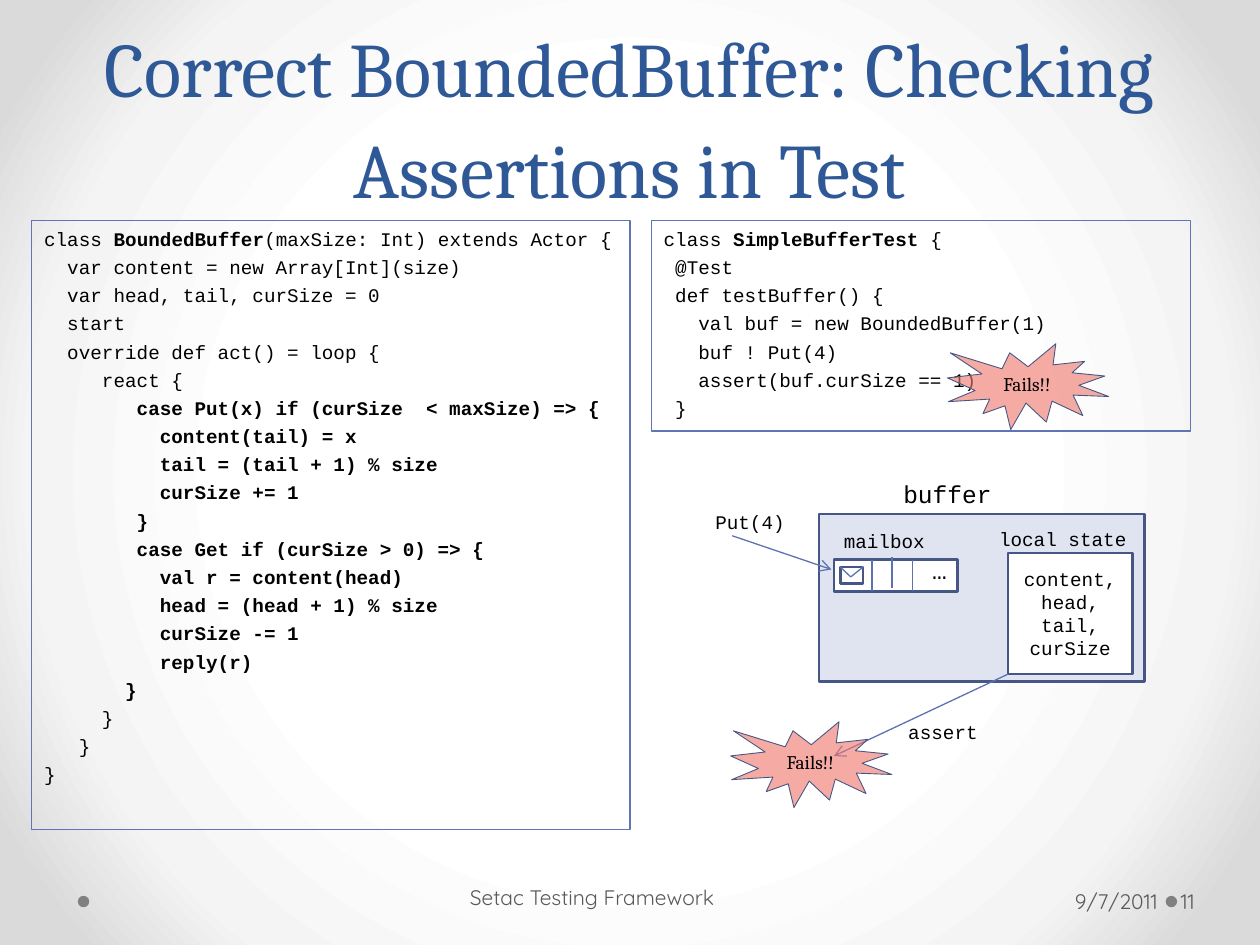
"""Build the slide on checking assertions of a correct BoundedBuffer."""
from lxml import etree
from pptx import Presentation
from pptx.dml.color import RGBColor
from pptx.enum.shapes import MSO_CONNECTOR, MSO_SHAPE
from pptx.enum.text import MSO_ANCHOR, MSO_AUTO_SIZE, PP_ALIGN
from pptx.oxml import parse_xml
from pptx.oxml.ns import nsdecls, qn
from pptx.util import Cm, Pt

RECT, OVAL, SEAL = MSO_SHAPE.RECTANGLE, MSO_SHAPE.OVAL, MSO_SHAPE.EXPLOSION1
STRAIGHT = MSO_CONNECTOR.STRAIGHT
LEFT, CENTER, RIGHT = PP_ALIGN.LEFT, PP_ALIGN.CENTER, PP_ALIGN.RIGHT
TOP, MIDDLE, BOTTOM = MSO_ANCHOR.TOP, MSO_ANCHOR.MIDDLE, MSO_ANCHOR.BOTTOM
NO_FIT = MSO_AUTO_SIZE.NONE

COLORS = {
    "title": "2F5897", "text": "000000", "footer": "595959", "dot": "808080",
    "frame": "6076B4", "outline": "475785", "line": "5C72B2",
    "actor": "DFE4F0", "white": "FFFFFF", "fail": "EF796D",
}
BACKDROP = [(50, "FFFFFF"), (76, "F4F4F4"), (92, "DADADA")]
SERIF, MONO, SANS = "Cambria", "Courier New", "Quicksand"
INSETS = (0.25, 0.13, 0.25, 0.13)

BUFFER_CODE = """class **BoundedBuffer**(maxSize: Int) extends Actor {
  var content = new Array[Int](size)
  var head, tail, curSize = 0
  start
  override def act() = loop {
     react {
**        case Put(x) if (curSize  < maxSize) => {
          content(tail) = x
          tail = (tail + 1) % size
          curSize += 1
        }
        case Get if (curSize > 0) => {
          val r = content(head)
          head = (head + 1) % size
          curSize -= 1
          reply(r)
       }**
     }
   }
}"""
TEST_CODE = """class **SimpleBufferTest** {
 @Test
 def testBuffer() {
   val buf = new BoundedBuffer(1)
   buf ! Put(4)
   assert(buf.curSize == 1)
 }"""


def write(frame, text, font=MONO, size=11, color="text", align=LEFT, anchor=TOP,
          insets=INSETS, before=0, leading=None):
    """Fill a text frame, one paragraph a line, with ** switching bold on and off."""
    frame.word_wrap = True
    frame.auto_size = NO_FIT
    frame.vertical_anchor = anchor
    (frame.margin_left, frame.margin_top,
     frame.margin_right, frame.margin_bottom) = map(Cm, insets)
    bold = False
    for row, line in enumerate(text.split("\n")):
        paragraph = frame.add_paragraph() if row else frame.paragraphs[0]
        paragraph.alignment = align
        paragraph.space_before = Pt(before if row else 0)
        if leading:
            paragraph.line_spacing = Pt(leading)
        for index, part in enumerate(line.split("**")):
            if index:
                bold = not bold
            if part:
                run = paragraph.add_run()
                run.text = part
                run.font.name, run.font.size, run.font.bold = font, Pt(size), bold
                run.font.color.rgb = RGBColor.from_string(COLORS[color])


class SlideBuilder:
    """Hold the current slide and draw its elements in one style."""

    def __init__(self, slide):
        self.slide = slide
        self.shapes = slide.shapes

    def background(self, stops):
        """Lay a radial gradient behind the slide."""
        marks = "".join(f'<a:gs pos="{pos * 1000}"><a:srgbClr val="{color}"/></a:gs>'
                        for pos, color in stops)
        self.slide.element.cSld.insert(0, parse_xml(
            f'<p:bg {nsdecls("p", "a")}><p:bgPr><a:gradFill rotWithShape="1">'
            f'<a:gsLst>{marks}</a:gsLst><a:path path="circle">'
            '<a:fillToRect l="50000" t="50000" r="50000" b="50000"/></a:path>'
            '</a:gradFill><a:effectLst/></p:bgPr></p:bg>'))

    def title(self, text, box):
        """Move and format the title placeholder."""
        title = self.shapes.title
        title.left, title.top, title.width, title.height = map(Cm, box)
        write(title.text_frame, text, font=SERIF, size=44, color="title",
              align=CENTER, anchor=BOTTOM, leading=58)

    def shape(self, box, kind=RECT, fill=None, line="outline", weight=1.5,
              opacity=None, text="", **fmt):
        """Draw a preset shape with optional text."""
        shape = self.shapes.add_shape(kind, *map(Cm, box))
        shape.shadow.inherit = False
        if fill:
            shape.fill.solid()
            shape.fill.fore_color.rgb = RGBColor.from_string(COLORS[fill])
        else:
            shape.fill.background()
        if opacity:
            color = shape.fill._xPr.find(".//" + qn("a:srgbClr"))
            etree.SubElement(color, qn("a:alpha"), val=str(opacity * 1000))
        if line:
            shape.line.color.rgb = RGBColor.from_string(COLORS[line])
            shape.line.width = Pt(weight)
        else:
            shape.line.fill.background()
        if text:
            write(shape.text_frame, text, **fmt)

    def label(self, text, box, **fmt):
        """Place a text box."""
        write(self.shapes.add_textbox(*map(Cm, box)).text_frame, text, **fmt)

    def line(self, start, end, arrow=False):
        """Draw a thin line, with an open arrowhead at its end if asked."""
        connector = self.shapes.add_connector(STRAIGHT, *map(Cm, start + end))
        connector.line.color.rgb = RGBColor.from_string(COLORS["line"])
        connector.line.width = Pt(0.75)
        if arrow:
            etree.SubElement(connector.line._get_or_add_ln(), qn("a:tailEnd"), type="arrow")
        etree.SubElement(connector.element.spPr, qn("a:effectLst"))

    def code(self, text, box):
        """Draw a framed code listing."""
        self.shape(box, line="frame", weight=0.75, text=text, before=2.9)

    def failure(self, left, top):
        """Draw a see-through burst that marks a failing assertion."""
        self.shape((left, top, 3.25, 1.73), SEAL, "fail", weight=0.5, opacity=62,
                   text="Fails!!", font=SERIF, align=CENTER, anchor=MIDDLE)

    def footer(self, text, box, align, insets):
        """Place one part of the footer."""
        self.label(text, box, font=SANS, size=12, color="footer", align=align,
                   anchor=MIDDLE, insets=insets)


def main():
    """Compose and save the slide."""
    deck = Presentation()
    deck.slide_width, deck.slide_height = Cm(25.4), Cm(19.05)
    page = SlideBuilder(deck.slides.add_slide(deck.slide_layouts[5]))
    page.background(BACKDROP)
    for dot_left in (23.5, 1.57):
        page.shape((dot_left, 18.06, 0.23, 0.23), OVAL, "dot", line=None)
    page.title("Correct BoundedBuffer: Checking Assertions in Test",
               (1.27, 0, 22.86, 4.45))
    page.code(BUFFER_CODE, (0.64, 4.45, 12.06, 12.27))
    page.footer("9/7/2011", (17.68, 17.65, 5.79, 1.02), RIGHT, (0.25, 0.13, 0.13, 0.13))
    page.footer("Setac Testing Framework", (8.05, 17.58, 7.9, 1.02), CENTER,
                (0.13, 0.13, 0.25, 0.13))
    page.footer("11", (23.72, 17.65, 1.55, 1.02), LEFT, (0.08, 0.13, 0.13, 0.13))
    page.code(TEST_CODE, (13.13, 4.45, 10.87, 4.24))

    page.label("buffer", (17.96, 9.53, 3.25, 0.86), size=14)
    page.label("Put(4)", (14.17, 10.16, 2.08, 0.74))
    page.shape((16.51, 10.36, 6.56, 3.38), fill="actor")
    page.shape((16.81, 11.28, 2.49, 0.64), fill="white")
    for slot_left, slot_top in ((17.98, 11.23), (17.58, 11.28), (18.39, 11.28)):
        page.line((slot_left, slot_top), (slot_left, slot_top + 0.63))
    page.label("…", (18.54, 11.05, 0.91, 0.86), size=14)
    page.label("mailbox", (16.76, 10.54, 2.57, 0.74))
    page.shape((20.32, 11.15, 2.51, 2.44), fill="white",
               text="content, head, tail, curSize", align=CENTER, anchor=MIDDLE)
    page.label("local state", (19.89, 10.49, 3.2, 0.74))

    page.shape((16.94, 11.43, 0.46, 0.33), fill="white")
    for flap_corner in (16.94, 17.4):
        page.line((17.15, 11.63), (flap_corner, 11.43))

    page.line((20.32, 13.59), (16.81, 15.24), arrow=True)
    page.label("assert", (18.06, 14.4, 2.08, 0.74))
    page.failure(19.1, 6.93)
    page.line((14.76, 10.8), (16.76, 11.48), arrow=True)
    page.failure(14.73, 14.55)
    deck.save("out.pptx")


if __name__ == "__main__":
    main()
